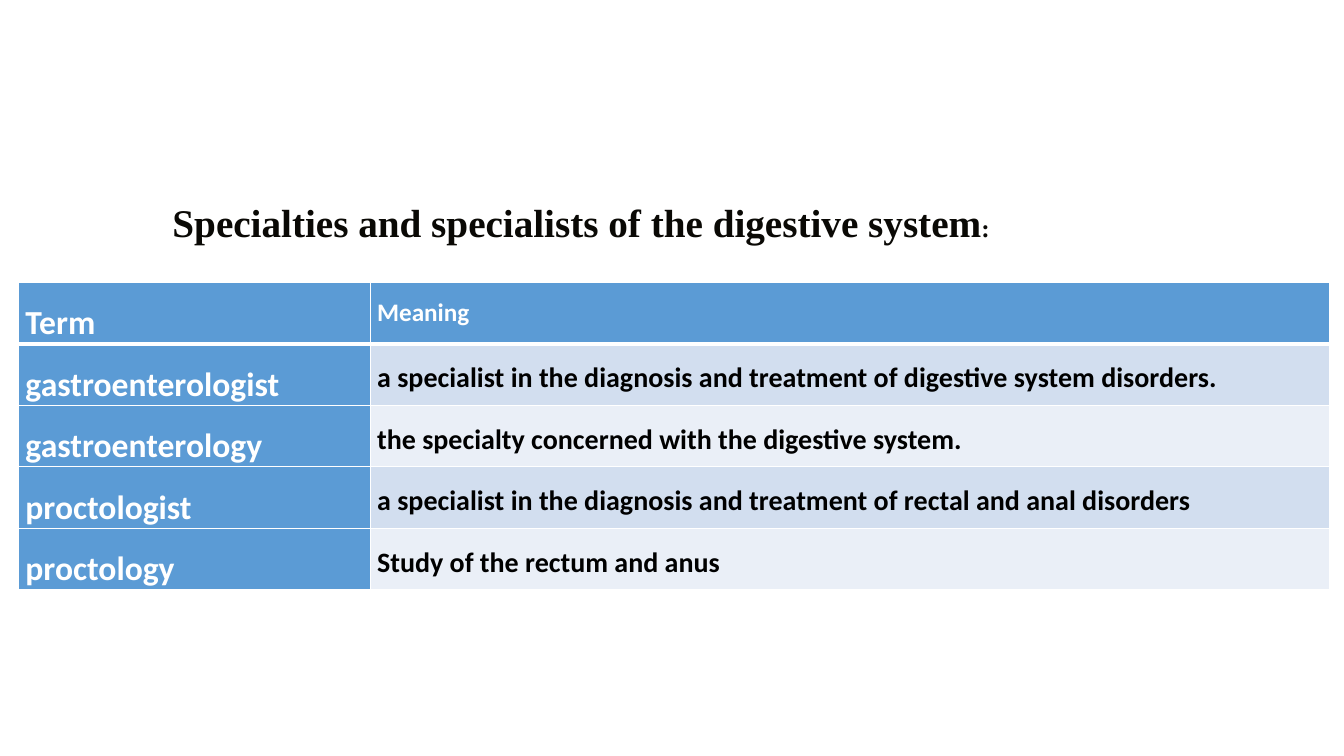
from lxml.etree import fromstring
from pptx import Presentation
from pptx.dml.color import RGBColor
from pptx.enum.text import MSO_ANCHOR, MSO_AUTO_SIZE, PP_ALIGN
from pptx.oxml.ns import nsdecls
from pptx.util import Pt

WHITE = RGBColor(0xFF, 0xFF, 0xFF)
BLACK = RGBColor(0x00, 0x00, 0x00)
TITLE_INK = RGBColor(0x0A, 0x09, 0x05)
BLUE = RGBColor(0x5B, 0x9B, 0xD5)
BANDS = (RGBColor(0xD2, 0xDE, 0xEF), RGBColor(0xEA, 0xEF, 0xF7))

TERMS = [
    ("Term", "Meaning"),
    ("gastroenterologist",
     "a specialist in the diagnosis and treatment of digestive system disorders."),
    ("gastroenterology", "the specialty concerned with the digestive system."),
    ("proctologist",
     "a specialist in the diagnosis and treatment of rectal and anal disorders"),
    ("proctology", "Study of the rectum and anus"),
]


def format_paragraph(paragraph, font_name, size, color):
    paragraph.alignment = PP_ALIGN.JUSTIFY
    paragraph.line_spacing = 1.5
    font = paragraph.font
    font.name, font.size, font.bold = font_name, Pt(size), True
    font.color.rgb = color


def add_title(slide, left, top, width, height):
    title = slide.shapes.title
    title.left, title.top, title.width, title.height = map(Pt, (left, top, width, height))
    frame = title.text_frame
    frame.word_wrap = True
    frame.auto_size = MSO_AUTO_SIZE.SHAPE_TO_FIT_TEXT
    frame.vertical_anchor = MSO_ANCHOR.TOP
    paragraph = frame.paragraphs[0]
    format_paragraph(paragraph, "Times New Roman", 28, TITLE_INK)
    paragraph.add_run().text = "Specialties and specialists of the digestive system"
    colon = paragraph.add_run()
    colon.text = ":"
    colon.font.size = Pt(18)


def set_borders(cell, widths):
    """Draw white borders; widths maps each side (L, R, T, B) to points."""
    properties = cell._tc.get_or_add_tcPr()
    for position, side in enumerate("LRTB"):
        line = fromstring(
            f'<a:ln{side} {nsdecls("a")} w="{Pt(widths[side])}"><a:solidFill>'
            f'<a:srgbClr val="{WHITE}"/></a:solidFill></a:ln{side}>')
        properties.insert(position, line)


def format_cell(cell, text, size, color, fill, widths):
    cell.margin_left = cell.margin_right = Pt(5)
    cell.margin_top = cell.margin_bottom = 0
    cell.text = text
    format_paragraph(cell.text_frame.paragraphs[0], "Calibri", size, color)
    cell.fill.solid()
    cell.fill.fore_color.rgb = fill
    set_borders(cell, widths)


def add_terms_table(slide, left, top, width, height, term_width):
    table = slide.shapes.add_table(
        len(TERMS), 2, Pt(left), Pt(top), Pt(width), Pt(height)).table
    table.first_col = True
    table.columns[0].width = Pt(term_width)
    table.columns[1].width = Pt(width - term_width)
    for row, (term, meaning) in enumerate(TERMS):
        header = row == 0
        widths = {"L": 1, "R": 1, "T": 3 if row == 1 else 1, "B": 3 if header else 1}
        format_cell(table.cell(row, 0), term, 24, WHITE, BLUE, widths)
        format_cell(table.cell(row, 1), meaning, 18 if header else 20,
                    WHITE if header else BLACK,
                    BLUE if header else BANDS[(row - 1) % 2], widths)


def main():
    presentation = Presentation()
    presentation.slide_width, presentation.slide_height = Pt(960), Pt(540)
    slide = presentation.slides.add_slide(presentation.slide_layouts[5])
    add_terms_table(slide, 13.2, 201.8, 936.5, 219.5, 251.2)
    add_title(slide, 116, 121, 792, 52)
    presentation.save("out.pptx")


if __name__ == "__main__":
    main()
